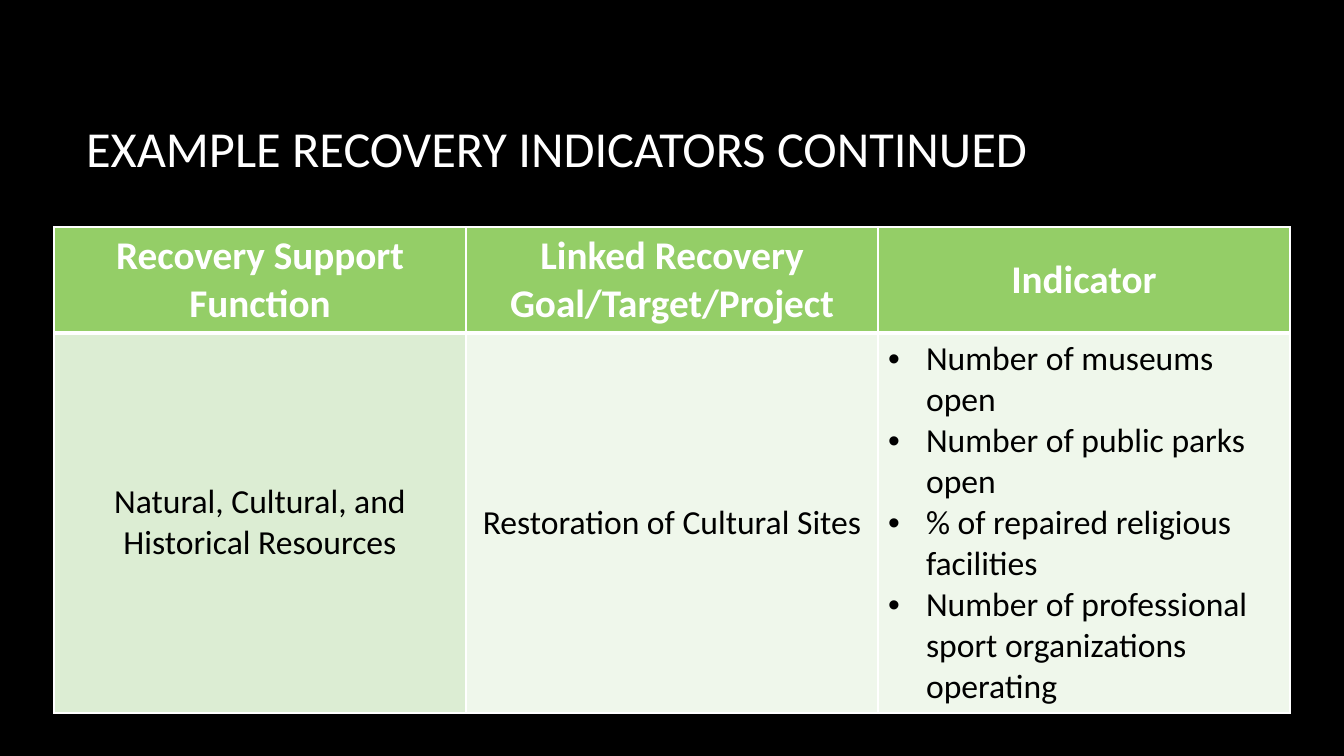
from dataclasses import dataclass

from lxml.etree import SubElement
from pptx import Presentation
from pptx.dml.color import RGBColor
from pptx.enum.text import MSO_ANCHOR, PP_ALIGN
from pptx.oxml.ns import qn
from pptx.util import Pt

EMU_PER_PX = 914400 / 100.8


def px(length):
    return round(length * EMU_PER_PX)


@dataclass(frozen=True)
class Theme:
    font: str = "Calibri"
    background: str = "000000"
    light: str = "FFFFFF"
    dark: str = "000000"
    header: str = "94CE67"
    function: str = "DCEDD3"
    detail: str = "EFF7EB"
    title_size: int = 36
    header_size: int = 28
    body_size: int = 24
    rule: int = 1
    header_rule: int = 3


class SlideBuilder:
    def __init__(self, theme, width, height):
        self.theme = theme
        self.deck = Presentation()
        self.deck.slide_width, self.deck.slide_height = px(width), px(height)
        self.slide = self.deck.slides.add_slide(self.deck.slide_layouts[5])
        backdrop = self.slide.background.fill
        backdrop.solid()
        backdrop.fore_color.rgb = RGBColor.from_string(theme.background)

    def add_text(self, paragraph, text, size, color, bold=False):
        run = paragraph.add_run()
        run.text = text
        font_format = {"name": self.theme.font, "size": Pt(size), "bold": bold}
        for attribute, value in font_format.items():
            setattr(run.font, attribute, value)
        run.font.color.rgb = RGBColor.from_string(color)

    def title(self, text, left, top, width, height):
        heading = self.slide.shapes.title
        bounds = {"left": left, "top": top, "width": width, "height": height}
        for attribute, value in bounds.items():
            setattr(heading, attribute, px(value))
        frame = heading.text_frame
        frame.word_wrap = True
        frame.vertical_anchor = MSO_ANCHOR.MIDDLE
        paragraph = frame.paragraphs[0]
        paragraph.alignment = PP_ALIGN.LEFT
        self.add_text(paragraph, text, self.theme.title_size, self.theme.light)

    def bullet(self, paragraph, indent):
        properties = paragraph._p.get_or_add_pPr()
        properties.set("marL", str(px(indent)))
        properties.set("indent", str(-px(indent)))
        SubElement(properties, qn("a:buFont"), typeface="Arial")
        SubElement(properties, qn("a:buChar"), char="•")

    def borders(self, cell, top, bottom):
        rules = {"L": self.theme.rule, "R": self.theme.rule, "T": top, "B": bottom}
        properties = cell._tc.get_or_add_tcPr()
        for side, weight in rules.items():
            line = SubElement(properties, qn(f"a:ln{side}"), w=str(Pt(weight)))
            solid = SubElement(line, qn("a:solidFill"))
            SubElement(solid, qn("a:srgbClr"), val=self.theme.light)

    def cell(self, cell, content, fill, size, color, bold, top, bottom):
        self.borders(cell, top, bottom)
        cell.fill.solid()
        cell.fill.fore_color.rgb = RGBColor.from_string(fill)
        cell.vertical_anchor = MSO_ANCHOR.MIDDLE
        bulleted = isinstance(content, list)
        for index, text in enumerate(content if bulleted else [content]):
            frame = cell.text_frame
            paragraph = frame.add_paragraph() if index else frame.paragraphs[0]
            paragraph.alignment = PP_ALIGN.LEFT if bulleted else PP_ALIGN.CENTER
            if bulleted:
                self.bullet(paragraph, 38)
            self.add_text(paragraph, text, size, color, bold)

    def table(self, headers, details, left, top, column_width, row_heights):
        theme = self.theme
        columns = len(headers)
        table = self.slide.shapes.add_table(
            2, columns, px(left), px(top),
            px(column_width * columns), px(sum(row_heights)),
        ).table
        for column in table.columns:
            column.width = px(column_width)
        for row, height in zip(table.rows, row_heights):
            row.height = px(height)
        header_style = {
            "size": theme.header_size, "color": theme.light, "bold": True,
            "top": theme.rule, "bottom": theme.header_rule,
        }
        detail_style = {
            "size": theme.body_size, "color": theme.dark, "bold": False,
            "top": theme.header_rule, "bottom": theme.rule,
        }
        for index, (header, detail) in enumerate(zip(headers, details)):
            detail_fill = theme.detail if index else theme.function
            self.cell(table.cell(0, index), header, theme.header, **header_style)
            self.cell(table.cell(1, index), detail, detail_fill, **detail_style)


def main():
    indicators = SlideBuilder(Theme(), 1344, 756)
    indicators.title("EXAMPLE RECOVERY INDICATORS CONTINUED", 76, 67, 1117, 160)
    indicators.table(
        headers=[
            "Recovery Support Function",
            "Linked Recovery Goal/Target/Project",
            "Indicator",
        ],
        details=[
            "Natural, Cultural, and Historical Resources",
            "Restoration of Cultural Sites",
            [
                "Number of museums open",
                "Number of public parks open",
                "% of repaired religious facilities",
                "Number of professional sport organizations operating",
            ],
        ],
        left=54,
        top=227,
        column_width=412,
        row_heights=[106, 380],
    )
    indicators.deck.save("out.pptx")


if __name__ == "__main__":
    main()
